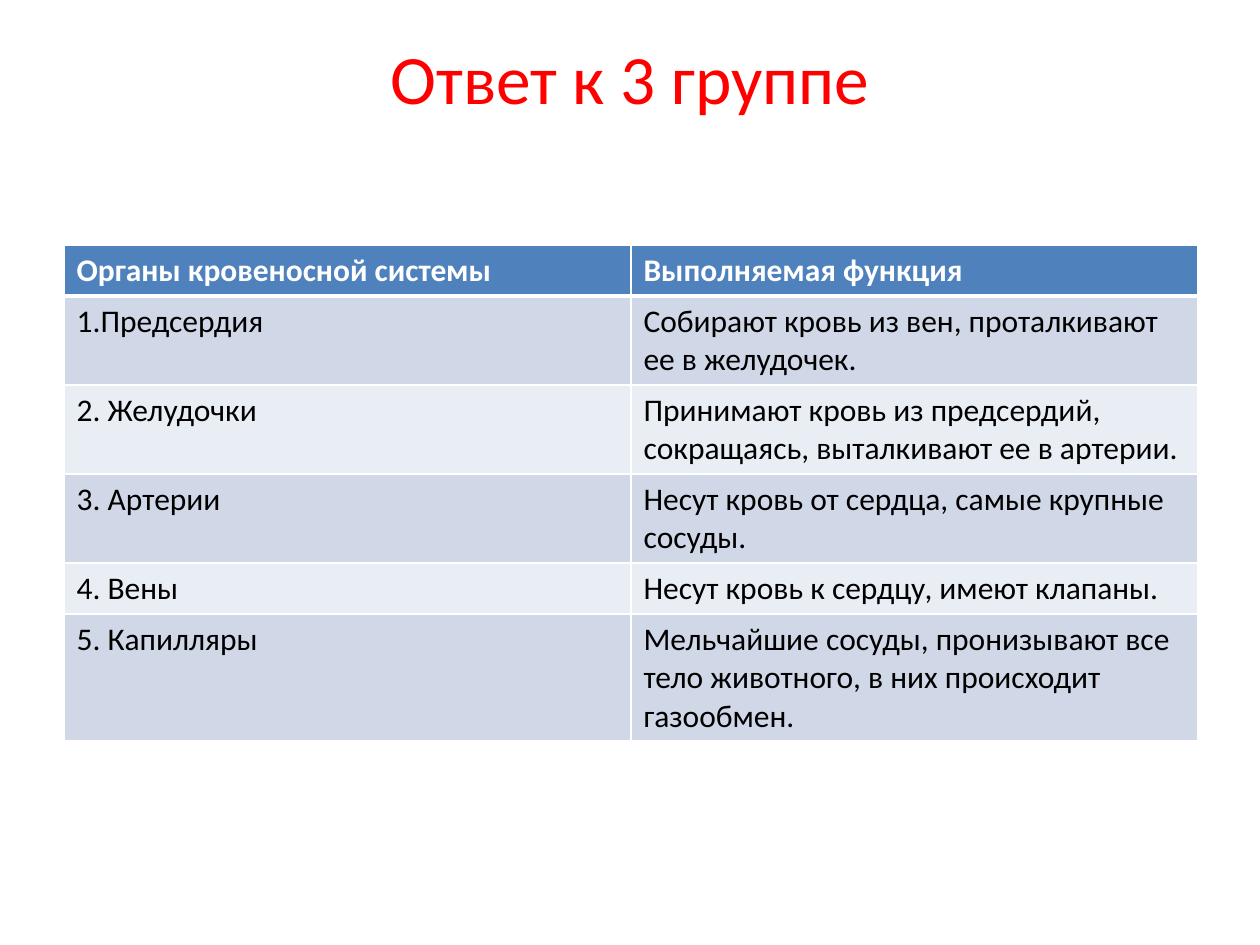
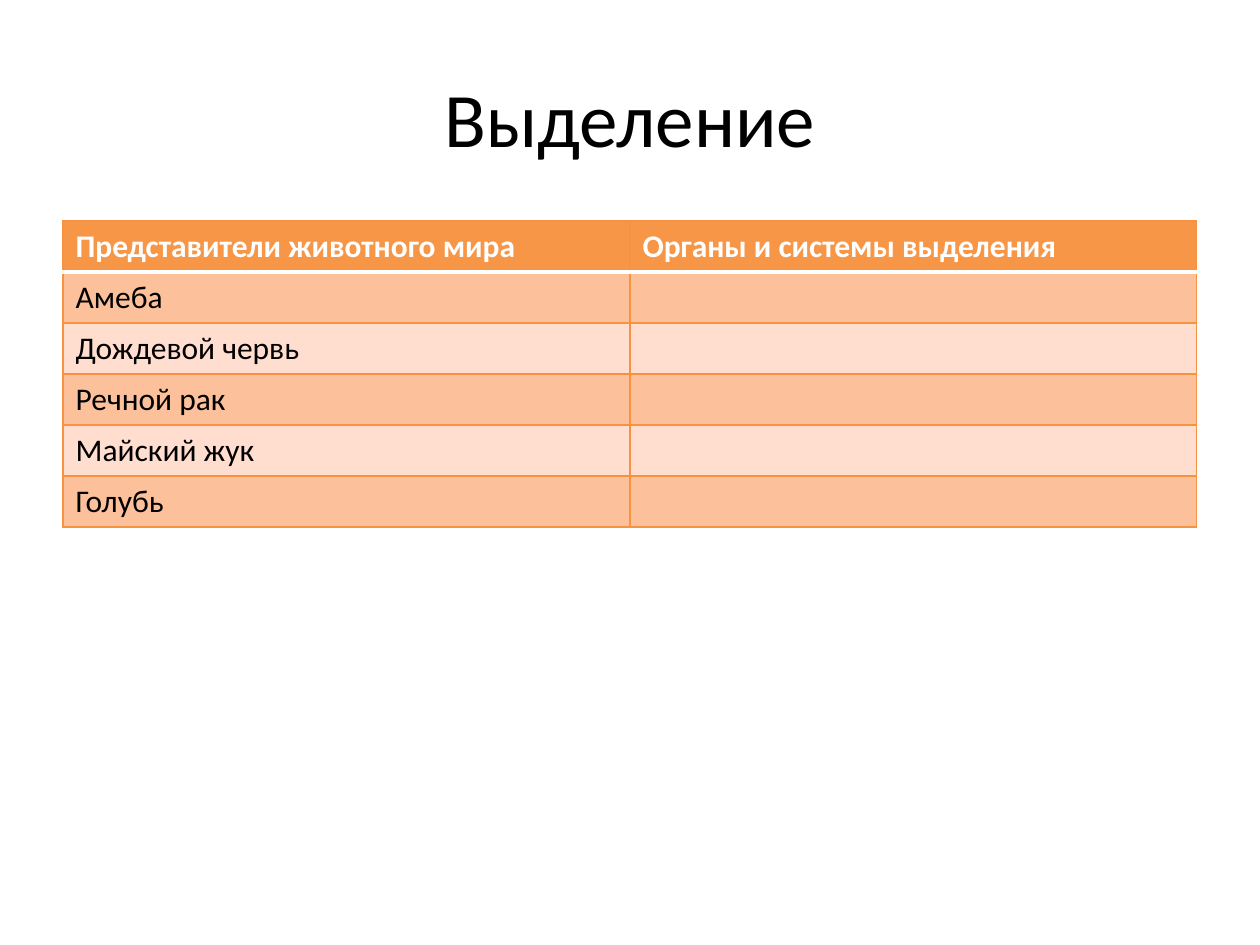
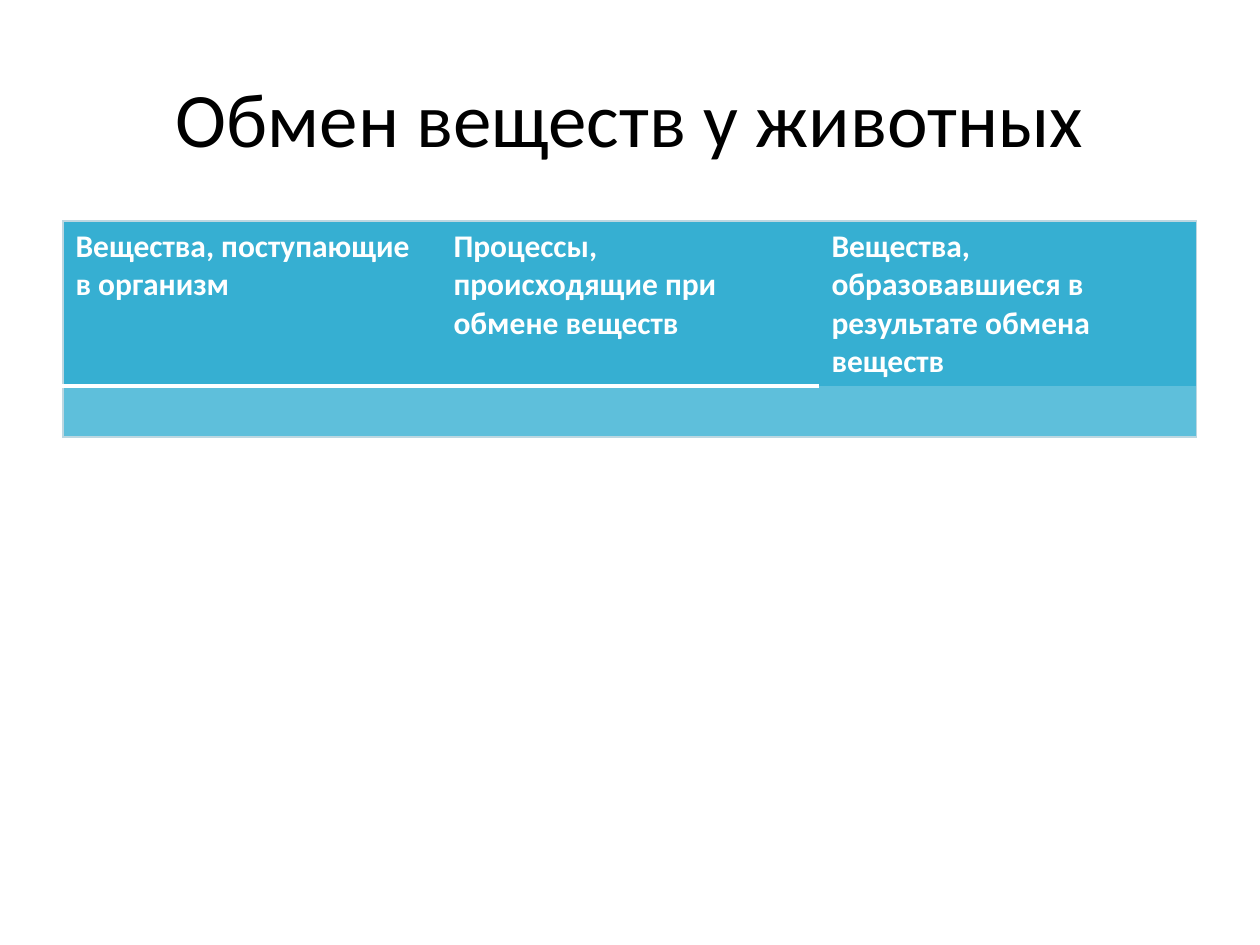
import pptx
import pptx.dml.color
import pptx.enum.text
import pptx.oxml.ns
import pptx.util
from lxml import etree

RGBColor = pptx.dml.color.RGBColor
PX = 914400 // 126
FONT = "Calibri"
BLACK = RGBColor(0x00, 0x00, 0x00)
WHITE = RGBColor(0xFF, 0xFF, 0xFF)
RED = RGBColor(0xFF, 0x00, 0x00)
BLUE = RGBColor(0x4F, 0x81, 0xBD)
BLUE_BAND = RGBColor(0xD0, 0xD8, 0xE8)
BLUE_PALE = RGBColor(0xE9, 0xED, 0xF4)
ORANGE = RGBColor(0xF7, 0x96, 0x46)
ORANGE_LINE = RGBColor(0xF6, 0x92, 0x40)
ORANGE_BAND = RGBColor(0xFC, 0xC1, 0x9A)
ORANGE_PALE = RGBColor(0xFF, 0xDD, 0xCF)
TEAL = RGBColor(0x36, 0xAF, 0xD2)
TEAL_BAND = RGBColor(0x5E, 0xBF, 0xDB)
TEAL_LINE = RGBColor(0xBC, 0xD7, 0xE1)

MARGIN = 63
CONTENT_WIDTH = 1134
TITLE_TOP = 38
LINE_HEIGHT = 38
CELL_PADDING = 13

# "lines" counts the text lines of each row; "ruled" counts the columns
# that have a rule under the header.
SLIDES = [
    {
        "title": "Ответ к 3 группе", "title_size": 39.6, "title_color": RED, "title_height": 77,
        "left": 64, "top": 245, "lines": [1, 2, 2, 2, 1, 3],
        "header": BLUE, "bands": [BLUE_BAND, BLUE_PALE],
        "outer": WHITE, "inner": WHITE, "line_width": 1, "rule_width": 3, "ruled": 2,
        "rows": [
            ["Органы кровеносной системы", "Выполняемая функция"],
            ["1.Предсердия", "Собирают кровь из вен, проталкивают ее в желудочек."],
            ["2. Желудочки", "Принимают кровь из предсердий, сокращаясь, выталкивают ее в артерии."],
            ["3. Артерии", "Несут кровь от сердца, самые крупные сосуды."],
            ["4. Вены", "Несут кровь к сердцу, имеют клапаны."],
            ["5. Капилляры",
             "Мельчайшие сосуды, пронизывают все тело животного, в них происходит газообмен."],
        ],
    },
    {
        "title": "Выделение", "title_size": 44, "title_color": BLACK, "title_height": 158,
        "left": MARGIN, "top": 221, "lines": [1] * 6,
        "header": ORANGE, "bands": [ORANGE_BAND, ORANGE_PALE],
        "outer": ORANGE_LINE, "inner": ORANGE_LINE, "line_width": 0.75, "rule_width": 2, "ruled": 2,
        "rows": [
            ["Представители животного мира", "Органы и системы выделения"],
            ["Амеба", ""],
            ["Дождевой червь", ""],
            ["Речной рак", ""],
            ["Майский жук", ""],
            ["Голубь", ""],
        ],
    },
    {
        "title": "Обмен веществ у животных", "title_size": 44, "title_color": BLACK, "title_height": 158,
        "left": MARGIN, "top": 221, "lines": [4, 1],
        "header": TEAL, "bands": [TEAL_BAND],
        "outer": TEAL_LINE, "inner": None, "line_width": 0.75, "rule_width": 3, "ruled": 2,
        "rows": [
            ["Вещества, поступающие в организм", "Процессы, происходящие при обмене веществ",
             "Вещества, образовавшиеся в результате обмена веществ"],
            ["", "", ""],
        ],
    },
]


def add_text(frame, text, size, color, bold=False):
    run = frame.paragraphs[0].add_run()
    run.text = text
    run.font.name = FONT
    run.font.size = pptx.util.Pt(size)
    run.font.color.rgb = color
    run.font.bold = bold


def draw_edge(cell, side, color, width):
    """Set one border of a cell; side is L, R, T or B, and no color means no line."""
    qn = pptx.oxml.ns.qn
    properties = cell._tc.get_or_add_tcPr()
    edge = etree.SubElement(properties, qn(f"a:ln{side}"), w=str(pptx.util.Pt(width)))
    if color is None:
        etree.SubElement(edge, qn("a:noFill"))
    else:
        fill = etree.SubElement(edge, qn("a:solidFill"))
        etree.SubElement(fill, qn("a:srgbClr"), val=str(color))


deck = pptx.Presentation()
deck.slide_width = 1260 * PX
deck.slide_height = 945 * PX

for content in SLIDES:
    slide = deck.slides.add_slide(deck.slide_layouts[6])

    title = slide.shapes.add_textbox(
        MARGIN * PX, TITLE_TOP * PX, CONTENT_WIDTH * PX, content["title_height"] * PX).text_frame
    title.word_wrap = True
    title.vertical_anchor = pptx.enum.text.MSO_ANCHOR.MIDDLE
    title.paragraphs[0].alignment = pptx.enum.text.PP_ALIGN.CENTER
    add_text(title, content["title"], content["title_size"], content["title_color"])

    rows = content["rows"]
    heights = [CELL_PADDING + LINE_HEIGHT * count for count in content["lines"]]
    last_row, last_column = len(rows) - 1, len(rows[0]) - 1
    table = slide.shapes.add_table(
        len(rows), len(rows[0]), content["left"] * PX, content["top"] * PX,
        CONTENT_WIDTH * PX, sum(heights) * PX).table

    for r, texts in enumerate(rows):
        table.rows[r].height = heights[r] * PX
        for c, text in enumerate(texts):
            cell = table.cell(r, c)
            outer, inner, width = content["outer"], content["inner"], content["line_width"]
            rule = (WHITE, content["rule_width"]) if c < content["ruled"] else (inner, width)
            draw_edge(cell, "L", outer if c == 0 else inner, width)
            draw_edge(cell, "R", outer if c == last_column else inner, width)
            draw_edge(cell, "T", *(rule if r == 1 else (outer if r == 0 else inner, width)))
            draw_edge(cell, "B", *(rule if r == 0 else (outer if r == last_row else inner, width)))

            bands = content["bands"]
            cell.fill.solid()
            cell.fill.fore_color.rgb = content["header"] if r == 0 else bands[(r - 1) % len(bands)]
            if text:
                add_text(cell.text_frame, text, 18, WHITE if r == 0 else BLACK, bold=r == 0)

deck.save("out.pptx")
